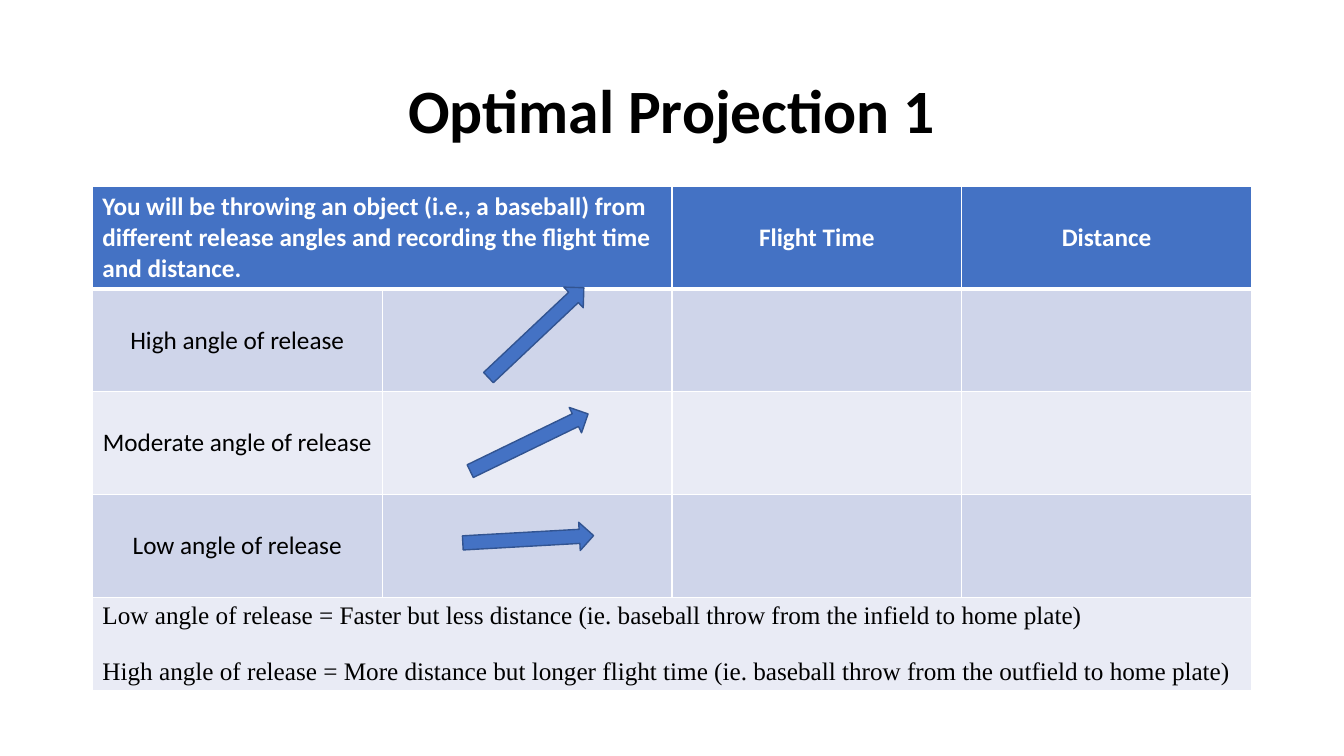
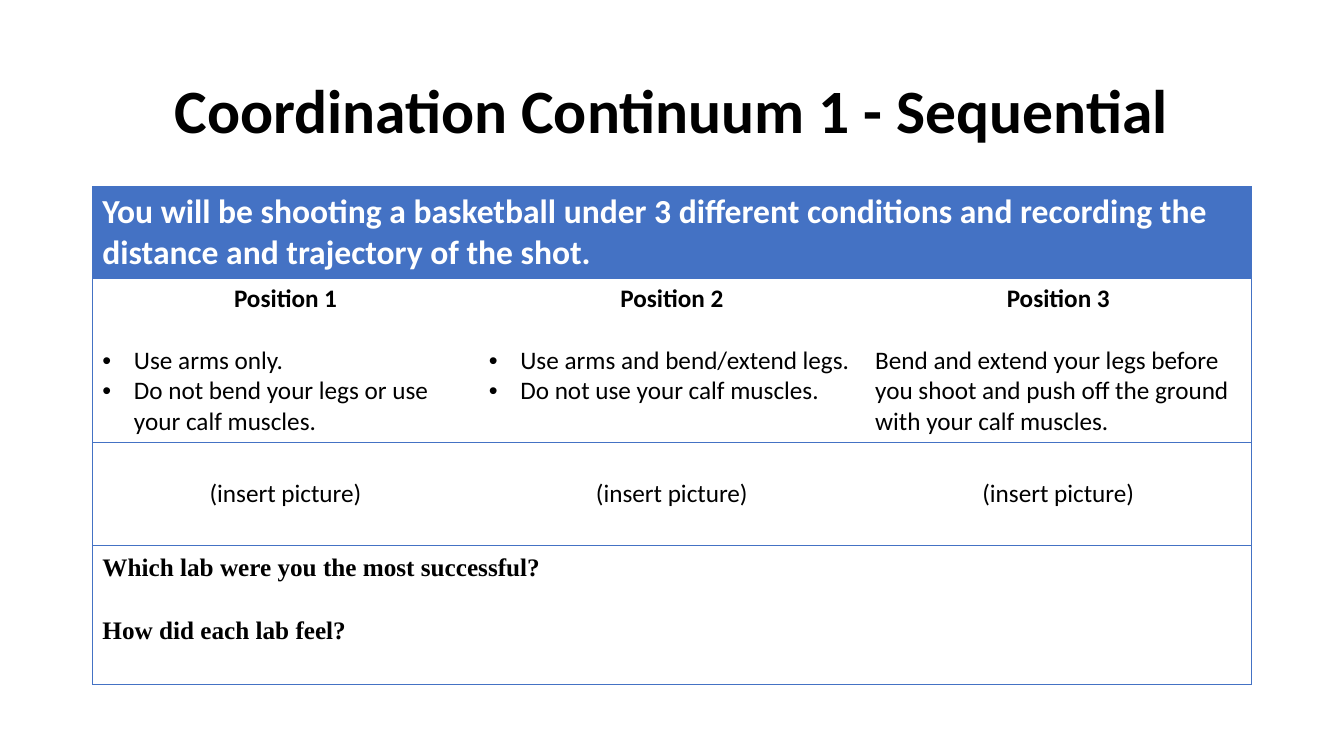
from lxml.etree import SubElement
from pptx import Presentation
from pptx.dml.color import RGBColor
from pptx.enum.shapes import MSO_SHAPE
from pptx.enum.text import MSO_ANCHOR, PP_ALIGN
from pptx.oxml.ns import qn
from pptx.util import Pt

COLORS = {"black": "000000", "white": "FFFFFF", "blue": "4472C4", "outline": "325491",
          "band": "CFD5EA", "light": "E9EBF5"}
LEFT, WIDTH = 66, 828
TITLE_TOP, TITLE_HEIGHT, TABLE_TOP = 28.75, 104.4, 133.1
BULLET_INDENT = 22.5

CENTER = {"alignment": PP_ALIGN.CENTER}
BODY_FONT = {"name": "Calibri", "size": Pt(18), "bold": False}
BOLD_FONT = {**BODY_FONT, "bold": True}
SERIF_FONT = {**BODY_FONT, "name": "Times New Roman"}
# Each style: paragraph format, font format, colour
STYLES = {
    "title": ({**CENTER, "line_spacing": 0.9}, {**BOLD_FONT, "size": Pt(44)}, "black"),
    "header": ({}, BOLD_FONT, "white"),
    "header center": (CENTER, BOLD_FONT, "white"),
    "header large": ({}, {**BOLD_FONT, "size": Pt(24)}, "white"),
    "label": (CENTER, BODY_FONT, "black"),
    "position": ({**CENTER, "space_after": Pt(22)}, BOLD_FONT, "black"),
    "body": ({}, BODY_FONT, "black"),
    "bullet": ({}, BODY_FONT, "black"),
    "note": ({}, SERIF_FONT, "black"),
    "note spaced": ({"space_after": Pt(19.5)}, SERIF_FONT, "black"),
    "question": ({"line_spacing": 1.15, "space_after": Pt(22)},
                 {**SERIF_FONT, "bold": True}, "black"),
}

# Each row: height, fill, anchor, column spans, cells as lists of (text, style)
MIDDLE, TOP = MSO_ANCHOR.MIDDLE, MSO_ANCHOR.TOP
SLIDES = [
    {
        "title": "Optimal Projection 1",
        "line": "white",
        "horizontal": [1, 3, 1, 1, 1, 1],
        "vertical": [1, 1, 1, 1, 1],
        "rows": [
            (73.4, "blue", MIDDLE, (2, 1, 1), [
                [("You will be throwing an object (i.e., a baseball) from different release "
                  "angles and recording the flight time and distance.", "header")],
                [("Flight Time", "header center")],
                [("Distance", "header center")]]),
            (73.4, "band", MIDDLE, (1, 1, 1, 1),
             [[("High angle of release", "label")], [], [], []]),
            (73.4, "light", MIDDLE, (1, 1, 1, 1),
             [[("Moderate angle of release", "label")], [], [], []]),
            (73.4, "band", MIDDLE, (1, 1, 1, 1),
             [[("Low angle of release", "label")], [], [], []]),
            (66, "light", MIDDLE, (4,), [
                [("Low angle of release = Faster but less distance (ie. baseball throw from "
                  "the infield to home plate)", "note spaced"),
                 ("High angle of release = More distance but longer flight time (ie. baseball "
                  "throw from the outfield to home plate)", "note")]]),
        ],
        # left, top, rotation
        "arrows": [(336.2, 227.5, 316.7), (331.2, 306, 334.1), (330.5, 375.1, 356.8)],
    },
    {
        "title": "Coordination Continuum 1 - Sequential",
        "line": "blue",
        "horizontal": [0.5, 0.5, 0.5, 0.5, 0.5],
        "vertical": [0.5, 0, 0, 0.5],
        "rows": [
            (65.8, "blue", TOP, (3,), [
                [("You will be shooting a basketball under 3 different conditions and "
                  "recording the distance and trajectory of the shot.", "header large")]]),
            (117, None, TOP, (1, 1, 1), [
                [("Position 1", "position"),
                 ("Use arms only.", "bullet"),
                 ("Do not bend your legs or use your calf muscles.", "bullet")],
                [("Position 2", "position"),
                 ("Use arms and bend/extend legs.", "bullet"),
                 ("Do not use your calf muscles.", "bullet")],
                [("Position 3", "position"),
                 ("Bend and extend your legs before you shoot and push off the ground with "
                  "your calf muscles.", "body")]]),
            (73.2, None, MIDDLE, (1, 1, 1), [[("(insert picture)", "label")]] * 3),
            (99.4, None, TOP, (3,), [
                [("Which lab were you the most successful?", "question"),
                 ("How did each lab feel?", "question")]]),
        ],
        "arrows": [],
    },
]
ARROW_WIDTH, ARROW_HEIGHT = 93.6, 20.2


def color(name):
    return RGBColor.from_string(COLORS[name])


def set_attributes(target, values):
    for name, value in values.items():
        setattr(target, name, value)


def add_bullet(paragraph):
    properties = paragraph._p.get_or_add_pPr()
    properties.set("marL", str(Pt(BULLET_INDENT)))
    properties.set("indent", str(-Pt(BULLET_INDENT)))
    SubElement(properties, qn("a:buFont"), typeface="Arial")
    SubElement(properties, qn("a:buChar"), char="•")


def write_text(text_frame, paragraphs):
    for index, (text, style) in enumerate(paragraphs):
        paragraph = text_frame.add_paragraph() if index else text_frame.paragraphs[0]
        paragraph_format, font_format, font_color = STYLES[style]
        set_attributes(paragraph, paragraph_format)
        if style == "bullet":
            add_bullet(paragraph)
        run = paragraph.add_run()
        run.text = text
        set_attributes(run.font, font_format)
        run.font.color.rgb = color(font_color)


def set_borders(cell, widths, line_color):
    """Draw left, right, top and bottom borders; a width of 0 means no line."""
    properties = cell._tc.get_or_add_tcPr()
    for side, width in zip("LRTB", widths):
        line = SubElement(properties, qn(f"a:ln{side}"), w=str(Pt(width)))
        if width:
            fill = SubElement(line, qn("a:solidFill"))
            SubElement(fill, qn("a:srgbClr"), val=COLORS[line_color])
        else:
            SubElement(line, qn("a:noFill"))


def add_grid(slide, content):
    rows, vertical, horizontal = content["rows"], content["vertical"], content["horizontal"]
    column_count = len(vertical) - 1
    height = sum(row[0] for row in rows)
    table = slide.shapes.add_table(len(rows), column_count, Pt(LEFT), Pt(TABLE_TOP),
                                   Pt(WIDTH), Pt(height)).table
    table.first_row = table.horz_banding = False
    for row_index, (row_height, fill, anchor, spans, cells) in enumerate(rows):
        table.rows[row_index].height = Pt(row_height)
        column = 0
        for span, paragraphs in zip(spans, cells):
            cell = table.cell(row_index, column)
            if span > 1:
                cell.merge(table.cell(row_index, column + span - 1))
            cell.vertical_anchor = anchor
            set_borders(cell, (vertical[column], vertical[column + span],
                               horizontal[row_index], horizontal[row_index + 1]),
                        content["line"])
            if fill:
                cell.fill.solid()
                cell.fill.fore_color.rgb = color(fill)
            else:
                cell.fill.background()
            write_text(cell.text_frame, paragraphs)
            column += span


def add_arrow(slide, left, top, rotation):
    arrow = slide.shapes.add_shape(MSO_SHAPE.RIGHT_ARROW, Pt(left), Pt(top),
                                   Pt(ARROW_WIDTH), Pt(ARROW_HEIGHT))
    arrow.rotation = rotation
    arrow.shadow.inherit = False
    arrow.fill.solid()
    arrow.fill.fore_color.rgb = color("blue")
    arrow.line.color.rgb = color("outline")
    arrow.line.width = Pt(1)


def add_slide(presentation, content):
    slide = presentation.slides.add_slide(presentation.slide_layouts.get_by_name("Title Only"))
    title = slide.shapes.title
    set_attributes(title, {"left": Pt(LEFT), "top": Pt(TITLE_TOP),
                           "width": Pt(WIDTH), "height": Pt(TITLE_HEIGHT)})
    title.text_frame.vertical_anchor = MIDDLE
    write_text(title.text_frame, [(content["title"], "title")])
    add_grid(slide, content)
    for arrow in content["arrows"]:
        add_arrow(slide, *arrow)


def main():
    presentation = Presentation()
    presentation.slide_width, presentation.slide_height = Pt(960), Pt(540)
    for content in SLIDES:
        add_slide(presentation, content)
    presentation.save("out.pptx")


if __name__ == "__main__":
    main()
